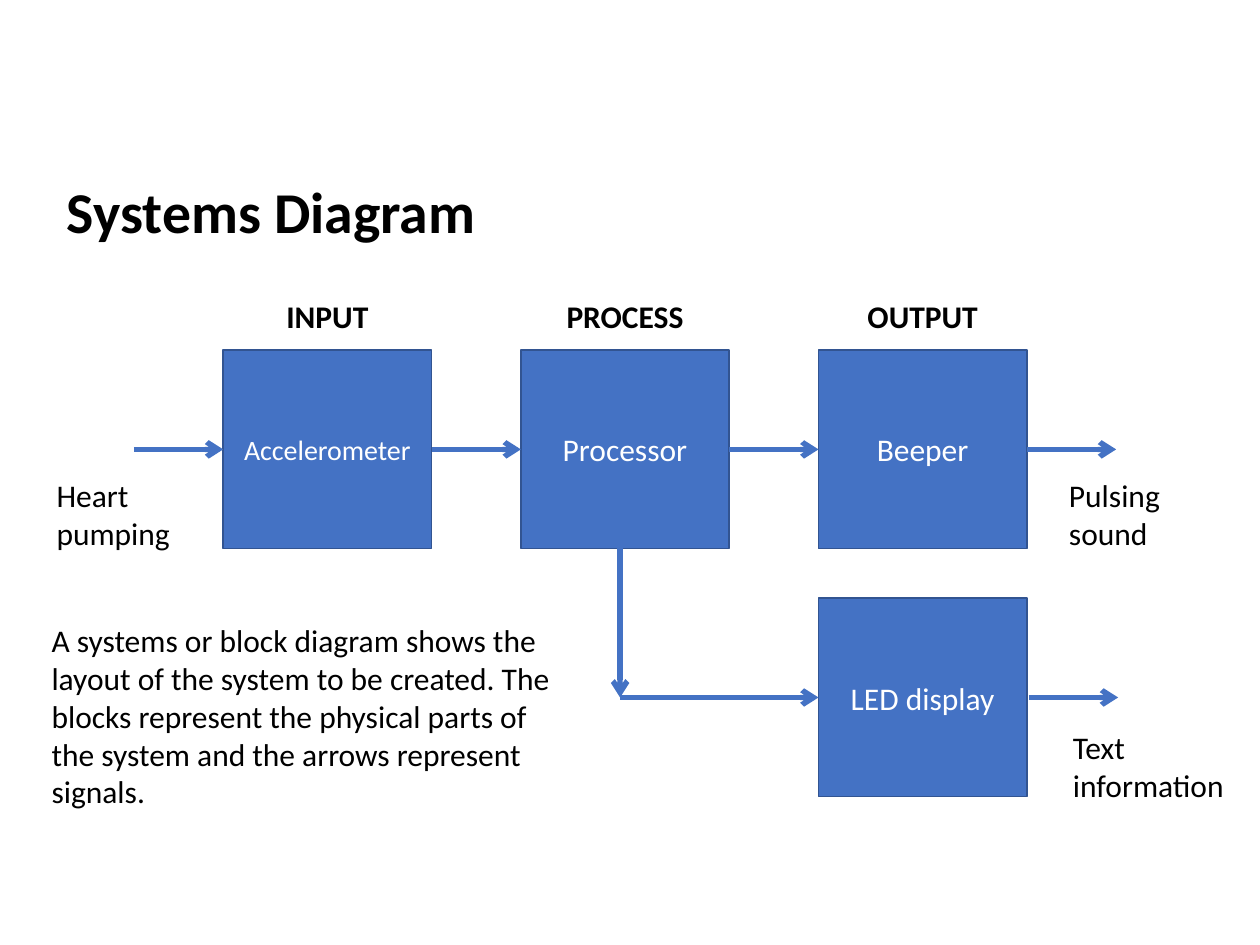
from lxml import etree
from pptx import Presentation
from pptx.dml.color import RGBColor
from pptx.enum import shapes, text
from pptx.oxml.ns import qn
from pptx.util import Cm, Pt

BLUE = RGBColor(0x44, 0x72, 0xC4)
DARK_BLUE = RGBColor(0x32, 0x54, 0x91)
WHITE = RGBColor(0xFF, 0xFF, 0xFF)
BLACK = RGBColor(0, 0, 0)

# Block grid, in centimetres
BLOCK_W, BLOCK_H = 4.2, 4.0
COLUMN_STEP, ROW_STEP = 6.0, 5.0
GAP = COLUMN_STEP - BLOCK_W


def style(paragraph, size, color=BLACK, bold=False):
    font = paragraph.font
    font.name, font.size, font.bold = "Calibri", Pt(size), bold
    font.color.rgb = color


def add_text(slide, wording, left, top, width, height, size=18, bold=False,
             align=text.PP_ALIGN.LEFT, anchor=text.MSO_ANCHOR.TOP):
    frame = slide.shapes.add_textbox(
        Cm(left), Cm(top), Cm(width), Cm(height)).text_frame
    frame.word_wrap = True
    frame.vertical_anchor = anchor
    paragraph = frame.paragraphs[0]
    paragraph.text = wording
    paragraph.alignment = align
    style(paragraph, size, bold=bold)
    return paragraph


def add_block(slide, name, left, top, size=18):
    block = slide.shapes.add_shape(
        shapes.MSO_SHAPE.RECTANGLE, Cm(left), Cm(top), Cm(BLOCK_W), Cm(BLOCK_H))
    block.shadow.inherit = False
    block.fill.solid()
    block.fill.fore_color.rgb = BLUE
    block.line.color.rgb = DARK_BLUE
    block.line.width = Pt(1)
    frame = block.text_frame
    frame.word_wrap = True
    frame.vertical_anchor = text.MSO_ANCHOR.MIDDLE
    paragraph = frame.paragraphs[0]
    paragraph.text = name
    paragraph.alignment = text.PP_ALIGN.CENTER
    style(paragraph, size, WHITE)


def add_arrow(slide, x1, y1, x2, y2):
    arrow = slide.shapes.add_connector(
        shapes.MSO_CONNECTOR.STRAIGHT, Cm(x1), Cm(y1), Cm(x2), Cm(y2))
    arrow.line.color.rgb = BLUE
    arrow.line.width = Pt(3)
    etree.SubElement(arrow.line._get_or_add_ln(), qn("a:tailEnd"), type="arrow")
    etree.SubElement(arrow._element.spPr, qn("a:effectLst"))


def add_title(slide, left, top, width, height):
    title = add_text(slide, "Systems Diagram", left, top, width, height,
                     size=33, bold=True, anchor=text.MSO_ANCHOR.MIDDLE)
    title.line_spacing = 0.9


def add_diagram(slide, left, top):
    """Place the block diagram with its first block at left, top."""
    columns = [left + i * COLUMN_STEP for i in range(3)]
    lower_top = top + ROW_STEP
    signal_y = top + BLOCK_H / 2
    lower_signal_y = signal_y + ROW_STEP
    output_right = columns[2] + BLOCK_W

    stages = [("INPUT", 2.2, "Accelerometer", 16),
              ("PROCESS", 3.0, "Processor", 18),
              ("OUTPUT", 3.4, "Beeper", 18)]
    for x, (heading, heading_w, part, size) in zip(columns, stages):
        add_block(slide, part, x, top, size)
        add_text(slide, heading, x + (BLOCK_W - heading_w) / 2, top - 1.2,
                 heading_w, 1.02, bold=True, align=text.PP_ALIGN.CENTER)
    add_block(slide, "LED display", columns[2], lower_top)

    for x in [*columns, output_right + GAP]:
        add_arrow(slide, x - GAP, signal_y, x, signal_y)
    add_arrow(slide, output_right + 0.04, lower_signal_y,
              output_right + 0.04 + GAP, lower_signal_y)

    branch_x = columns[1] + 2
    add_arrow(slide, branch_x, top + BLOCK_H - 0.44, branch_x, lower_signal_y)
    add_arrow(slide, branch_x, lower_signal_y, columns[2], lower_signal_y)

    signals = [("Heart pumping", left - 3.61, top, 3.4),
               ("Pulsing sound", output_right + 0.6, top, 3.68),
               ("Text information", output_right + 0.68, lower_top + 0.08, 3.6)]
    for signal, x, row_top, width in signals:
        add_text(slide, signal, x, row_top + 2.41, width, 1.8)


def add_explanation(slide, left, top, width, height):
    add_text(slide, "A systems or block diagram shows the layout of the system "
             "to be created. The blocks represent the physical parts of the "
             "system and the arrows represent signals.",
             left, top, width, height)


def main():
    deck = Presentation()
    deck.slide_width, deck.slide_height = Cm(25.4), Cm(19.05)
    slide = deck.slides.add_slide(deck.slide_layouts[6])
    add_title(slide, 1.1, 3.53, 22.86, 1.6)
    add_diagram(slide, 4.5, 7.06)
    add_explanation(slide, 0.79, 12.4, 11.0, 4.11)
    deck.save("out.pptx")


if __name__ == "__main__":
    main()
